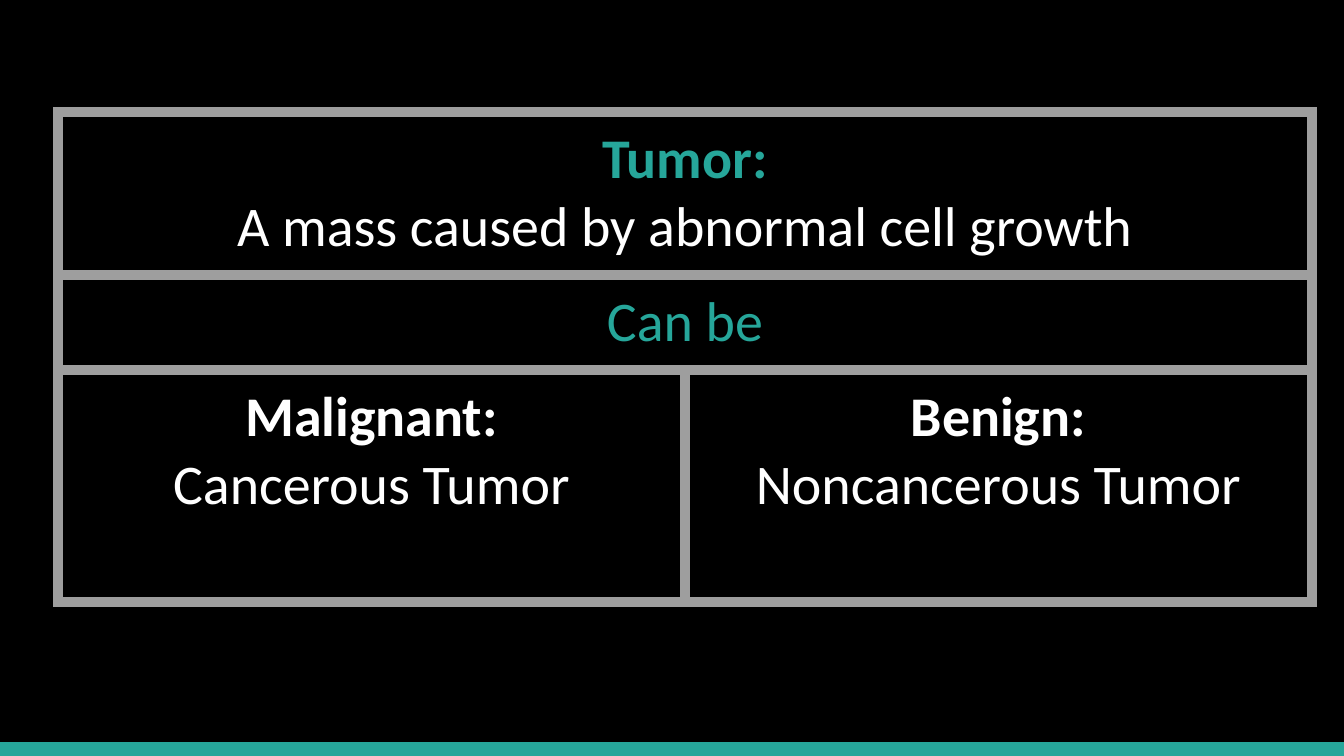
from lxml.etree import SubElement
from pptx import Presentation
from pptx.dml.color import RGBColor
from pptx.enum.shapes import MSO_SHAPE
from pptx.enum.text import PP_ALIGN
from pptx.oxml.ns import qn
from pptx.util import Pt

EMU_PER_PIXEL = 6804
COLORS = {"black": "000000", "teal": "26A69A", "gray": "9E9E9E", "white": "FFFFFF"}
COLUMN_WIDTHS = [627, 627]
ROW_HEIGHTS = [163, 95, 232]
CELL_MARGIN = 13
BORDER_POINTS = 6
CELL_LINES = {
    (0, 0): [("Tumor:", "teal", True),
             ("A mass caused by abnormal cell growth", "white", False)],
    (1, 0): [("Can be", "teal", False)],
    (2, 0): [("Malignant:", "white", True), ("Cancerous Tumor", "white", False)],
    (2, 1): [("Benign:", "white", True), ("Noncancerous Tumor", "white", False)],
}


def px(pixels):
    return pixels * EMU_PER_PIXEL


def color(name):
    return RGBColor.from_string(COLORS[name])


def set_background(slide):
    fill = slide.background.fill
    fill.solid()
    fill.fore_color.rgb = color("black")


def add_bar(slide, left, top, width, height):
    bar = slide.shapes.add_shape(
        MSO_SHAPE.RECTANGLE, px(left), px(top), px(width), px(height))
    bar.shadow.inherit = False
    bar.fill.solid()
    bar.fill.fore_color.rgb = color("teal")
    bar.line.fill.background()


def set_borders(cell):
    properties = cell._tc.get_or_add_tcPr()
    for index, side in enumerate(("lnL", "lnR", "lnT", "lnB")):
        border = SubElement(properties, qn(f"a:{side}"), w=str(Pt(BORDER_POINTS)))
        fill = SubElement(border, qn("a:solidFill"))
        SubElement(fill, qn("a:srgbClr"), val=COLORS["gray"])
        properties.insert(index, border)


def format_cell(cell):
    cell.fill.background()
    cell.margin_left = cell.margin_right = px(CELL_MARGIN)
    cell.margin_top = cell.margin_bottom = px(CELL_MARGIN)
    set_borders(cell)


def write_lines(cell, lines):
    text_frame = cell.text_frame
    text_frame.text = "\n".join(text for text, _, _ in lines)
    for paragraph, (_, color_name, bold) in zip(text_frame.paragraphs, lines):
        paragraph.alignment = PP_ALIGN.CENTER
        paragraph.font.name = "Calibri"
        paragraph.font.size = Pt(30)
        paragraph.font.bold = bold
        paragraph.font.color.rgb = color(color_name)


def add_tumor_table(slide, left, top):
    frame = slide.shapes.add_table(
        len(ROW_HEIGHTS), len(COLUMN_WIDTHS), px(left), px(top),
        px(sum(COLUMN_WIDTHS)), px(sum(ROW_HEIGHTS)))
    table = frame.table
    table.first_row = False
    table.horz_banding = False
    for column, width in zip(table.columns, COLUMN_WIDTHS):
        column.width = px(width)
    for row, height in zip(table.rows, ROW_HEIGHTS):
        row.height = px(height)
    for cell in table.iter_cells():
        format_cell(cell)
    for row_index in (0, 1):
        table.cell(row_index, 0).merge(table.cell(row_index, 1))
    for position, lines in CELL_LINES.items():
        write_lines(table.cell(*position), lines)


def main():
    presentation = Presentation()
    presentation.slide_width = px(1344)
    presentation.slide_height = px(756)
    slide = presentation.slides.add_slide(presentation.slide_layouts[6])
    set_background(slide)
    add_bar(slide, 0, 742, 1344, 14)
    add_tumor_table(slide, 58, 112)
    presentation.save("out.pptx")


if __name__ == "__main__":
    main()
